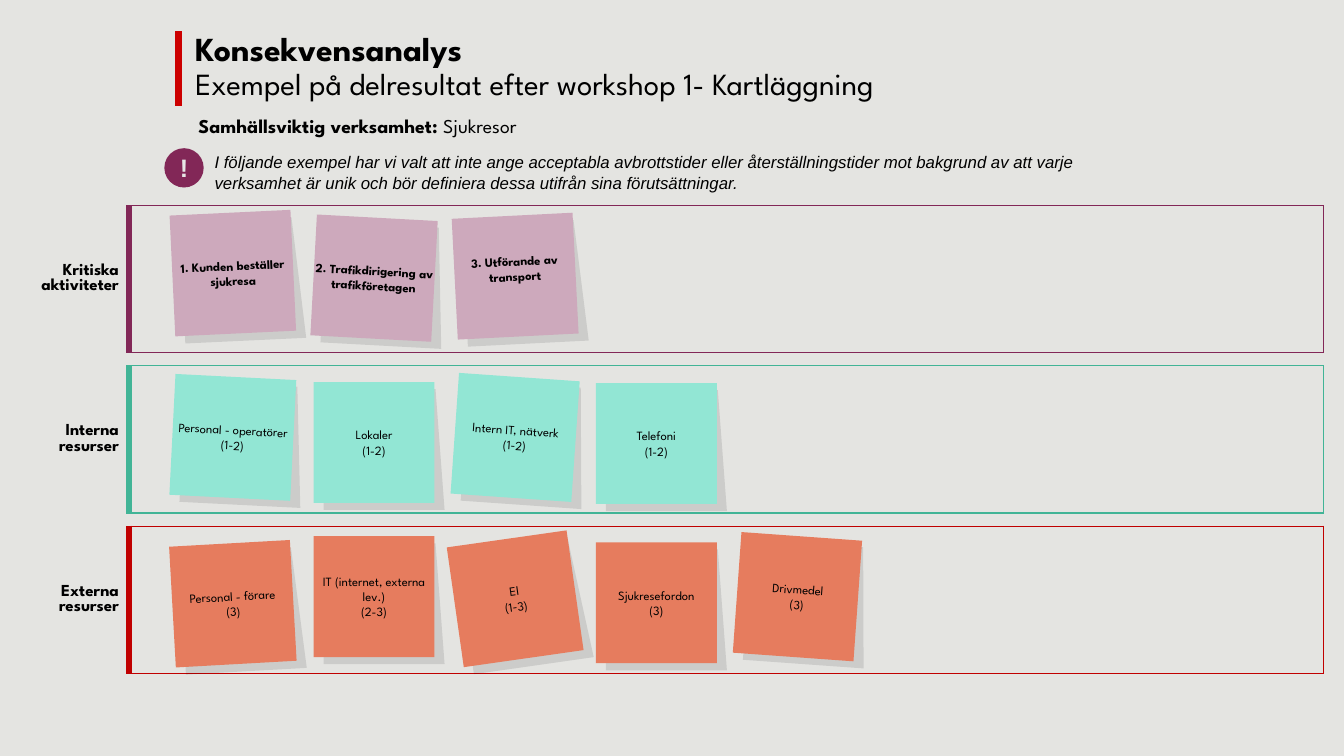
"""Builds the slide with mapped activities and resources on sticky notes."""
import pptx
import pptx.dml.color
import pptx.enum.shapes
import pptx.enum.text
import pptx.oxml.ns
import pptx.util
from lxml import etree

Inches, Pt = pptx.util.Inches, pptx.util.Pt
RGBColor = pptx.dml.color.RGBColor
ALIGN = pptx.enum.text.PP_ALIGN
MIDDLE = pptx.enum.text.MSO_ANCHOR.MIDDLE
SHAPE = pptx.enum.shapes.MSO_SHAPE
qn = pptx.oxml.ns.qn

BACKGROUND = RGBColor(0xE4, 0xE4, 0xE1)
BLACK = RGBColor(0, 0, 0)
PALE = RGBColor(0xE7, 0xE6, 0xE6)
RED = RGBColor(0xCC, 0, 0)
PLUM = RGBColor(0x82, 0x27, 0x57)
GREEN = RGBColor(0x41, 0xB4, 0x96)
DARK_RED = RGBColor(0xC0, 0, 0)
PINK = RGBColor(0xCD, 0xA9, 0xBC)
MINT = RGBColor(0x92, 0xE6, 0xD4)
ORANGE = RGBColor(0xE6, 0x7C, 0x5E)
SPARTAN = "League Spartan"

LEFT, TOP = 0.17, 2.04
LABEL_W, BOX_W = 1.11, 11.85
ROW_H, GAP_H = 1.46, 0.13
NOTE, NOTE_LEFT, NOTE_STEP = 1.2, 1.71, 1.4
SHADOW_X, SHADOW_Y = 0.1, 0.07

# Each note: lines, drop below the top of its row, rotation, bottom inset
ROWS = [
    (["Kritiska", "aktiviteter"], PLUM, PINK, True, [
        (["1. Kunden beställer sjukresa"], 0.07, -2.7, 0),
        (["2. Trafikdirigering av trafikföretagen"], 0.12, 3.1, 0),
        (["3. Utförande av transport"], 0.1, -2.9, 0.15)]),
    (["Interna", "resurser"], GREEN, MINT, False, [
        (["Personal - operatörer", "(1-2)"], 0.11, 2.9, 0),
        (["Lokaler", "(1-2)"], 0.16, 0, 0),
        (["Intern IT, nätverk", "(1-2)"], 0.11, 4, 0),
        (["Telefoni", "(1-2)"], 0.17, 0, 0)]),
    (["Externa resurser"], DARK_RED, ORANGE, False, [
        (["Personal - förare", "(3)"], 0.17, -3.2, 0),
        (["IT (internet, externa lev.)", "(2-3)"], 0.1, 0, 0),
        (["El", "(1-3)"], 0.12, -8.1, 0),
        (["Sjukresefordon", "(3)"], 0.16, 0, 0),
        (["Drivmedel", "(3)"], 0.1, 4.1, 0)]),
]


def write(tf, paragraphs, align=ALIGN.LEFT, font=SPARTAN, color=BLACK, italic=False):
    """Fill a text frame; every run is (text, size, bold)."""
    tf.word_wrap = True
    for i, runs in enumerate(paragraphs):
        p = tf.add_paragraph() if i else tf.paragraphs[0]
        p.alignment = align
        for text, size, bold in runs:
            r = p.add_run()
            r.text = text
            r.font.name, r.font.size = font, Pt(size)
            r.font.bold, r.font.italic = bold, italic
            r.font.color.rgb = color


def paint(sp, color):
    """Give a shape a plain fill, no outline, no shadow and no insets."""
    sp.shadow.inherit = False
    sp.fill.solid()
    sp.fill.fore_color.rgb = color
    sp.line.fill.background()
    tf = sp.text_frame
    tf.margin_left = tf.margin_right = tf.margin_top = tf.margin_bottom = 0
    tf.vertical_anchor = MIDDLE


prs = pptx.Presentation()
prs.slide_width, prs.slide_height = Inches(13.33), Inches(7.5)
s = prs.slides.add_slide(prs.slide_layouts[6])
s.background.fill.solid()
s.background.fill.fore_color.rgb = BACKGROUND

row_count = 2 * len(ROWS) - 1
table = s.shapes.add_table(
    row_count, 2, Inches(LEFT), Inches(TOP), Inches(LABEL_W + BOX_W),
    Inches(len(ROWS) * ROW_H + (len(ROWS) - 1) * GAP_H)).table
table.first_row = table.horz_banding = False
table.columns[0].width, table.columns[1].width = Inches(LABEL_W), Inches(BOX_W)
for n in range(row_count):
    is_gap = n % 2 == 1
    table.rows[n].height = Inches(GAP_H if is_gap else ROW_H)
    label, accent = ROWS[n // 2][:2]
    if is_gap:
        borders = [{}, {"T": (accent, 1), "B": (ROWS[n // 2 + 1][1], 1)}]
    else:
        thin, thick = (accent, 1), (accent, 4.5)
        borders = [{"R": thick}, {"L": thick, "T": thin, "R": thin, "B": thin}]
    for col in range(2):
        cell = table.cell(n, col)
        tcPr = cell._tc.get_or_add_tcPr()
        for side in "LRTB":
            ln = etree.SubElement(tcPr, qn("a:ln" + side))
            if side in borders[col]:
                color, width = borders[col][side]
                ln.set("w", str(Pt(width)))
                fill = etree.SubElement(ln, qn("a:solidFill"))
                etree.SubElement(fill, qn("a:srgbClr"), val=str(color))
            else:
                etree.SubElement(ln, qn("a:noFill"))
        cell.fill.background()
        cell.vertical_anchor = MIDDLE
        if is_gap:
            cell.margin_top = cell.margin_bottom = 0
        if col == 0 and not is_gap:
            write(cell.text_frame, [[(line, 12, True)] for line in label], ALIGN.RIGHT)
        else:
            etree.SubElement(cell.text_frame.paragraphs[0]._p, qn("a:endParaRPr"), sz="100")

for n, (label, accent, note_color, bold, notes) in enumerate(ROWS):
    for col, (lines, drop, angle, bottom) in enumerate(notes):
        x = NOTE_LEFT + col * NOTE_STEP
        y = TOP + n * (ROW_H + GAP_H) + drop
        group = s.shapes.add_group_shape()
        sx, sy = x + SHADOW_X, y + SHADOW_Y
        outline = group.shapes.build_freeform(Inches(sx), Inches(sy))
        outline.add_line_segments([
            (Inches(sx + NOTE - 0.09), Inches(sy)),
            (Inches(sx + NOTE), Inches(sy + NOTE)),
            (Inches(sx), Inches(sy + NOTE))])
        shadow = outline.convert_to_shape()
        paint(shadow, BLACK)
        rgb = shadow._element.spPr.find(qn("a:solidFill"))[0]
        etree.SubElement(rgb, qn("a:alpha"), val="10000")
        sp = group.shapes.add_shape(
            SHAPE.RECTANGLE, Inches(x), Inches(y), Inches(NOTE), Inches(NOTE))
        paint(sp, note_color)
        shadow.rotation = sp.rotation = angle
        sp.text_frame.margin_bottom = Inches(bottom)
        write(sp.text_frame, [[(line, 9, bold)] for line in lines], ALIGN.CENTER)

title = s.shapes.add_textbox(Inches(1.84), Inches(0.27), Inches(11.2), Inches(0.47))
write(title.text_frame, [
    [("Konsekvensanalys", 24, True)],
    [("Exempel på delresultat efter workshop 1- Kartläggning", 22, False)]])
for p in title.text_frame.paragraphs:
    p.line_spacing = 0.9

bar = s.shapes.add_connector(
    pptx.enum.shapes.MSO_CONNECTOR.STRAIGHT,
    Inches(1.77), Inches(0.31), Inches(1.77), Inches(1.05))
bar.line.color.rgb, bar.line.width = RED, Pt(5)
etree.SubElement(bar._element.spPr, qn("a:effectLst"))

service = s.shapes.add_textbox(Inches(1.87), Inches(1.08), Inches(11.26), Inches(0.34))
write(service.text_frame, [
    [("Samhällsviktig verksamhet: ", 14, True), ("Sjukresor", 14, False)]])

remark = s.shapes.add_textbox(Inches(2.03), Inches(1.46), Inches(9.1), Inches(0.5))
write(remark.text_frame, [[(
    "I följande exempel har vi valt att inte ange acceptabla avbrottstider eller "
    "återställningstider mot bakgrund av att varje verksamhet är unik och bör "
    "definiera dessa utifrån sina förutsättningar.", 12, False)]],
    font="Arial", italic=True)

badge = s.shapes.add_shape(
    SHAPE.OVAL, Inches(1.63), Inches(1.47), Inches(0.39), Inches(0.39))
paint(badge, PLUM)
write(badge.text_frame, [[("!", 18, True)]], ALIGN.CENTER, "Arial", PALE)

prs.save("out.pptx")
